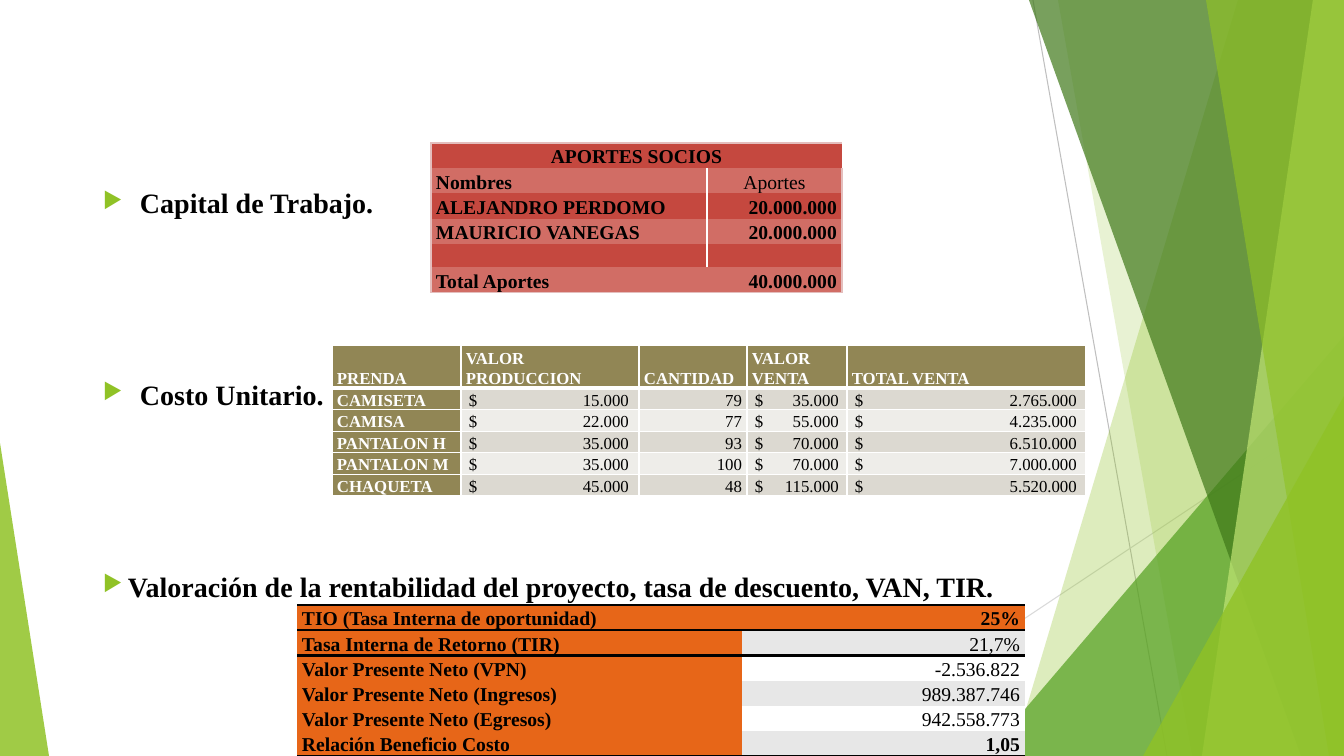
from dataclasses import dataclass, field
from lxml.etree import SubElement
from pptx import Presentation
from pptx.dml.color import RGBColor
from pptx.enum.shapes import MSO_CONNECTOR, MSO_SHAPE
from pptx.enum.text import MSO_ANCHOR, PP_ALIGN
from pptx.oxml.ns import qn
from pptx.util import Pt

EMU_PER_PX = 12192000 / 1344
SLIDE_WIDTH, SLIDE_HEIGHT = 1344, 756


@dataclass(frozen=True)
class Theme:
    font: str = "Times New Roman"
    bullet_size: int = 20
    body_size: int = 14
    small_size: int = 12
    black: str = "000000"
    white: str = "FFFFFF"
    lime: str = "90C226"
    pale_lime: str = "C0E474"
    green: str = "54A021"
    dark_green: str = "3F7819"
    line_dark: str = "BFBFBF"
    line_light: str = "D9D9D9"
    red: str = "C5483F"
    light_red: str = "D16D65"
    pink: str = "E4BEBD"
    olive: str = "918655"
    olive_bands: tuple = ("DCD9D1", "EEEDE9")
    orange: str = "E76618"
    grey_bands: tuple = ("E7E7E7", "FFFFFF")


THEME = Theme()


@dataclass
class Cell:
    text: str
    fill: str
    bold: bool = True
    color: str = THEME.black
    align: PP_ALIGN = PP_ALIGN.LEFT
    tab: int = 0
    borders: dict = field(default_factory=dict)


def px(length):
    return round(length * EMU_PER_PX)


def format_runs(paragraph, size, color, bold):
    for run in paragraph.runs:
        run.font.name = THEME.font
        run.font.size = Pt(size)
        run.font.bold = bold
        run.font.color.rgb = RGBColor.from_string(color)


def paint(shape, color, opacity):
    shape.shadow.inherit = False
    shape.fill.solid()
    shape.fill.fore_color.rgb = RGBColor.from_string(color)
    shape.line.fill.background()
    color_element = shape.fill._xPr.find(qn("a:solidFill"))[0]
    SubElement(color_element, qn("a:alpha"), val=str(opacity * 1000))


def add_line(slide, start, end, color):
    line = slide.shapes.add_connector(MSO_CONNECTOR.STRAIGHT, *map(px, start + end))
    line.line.color.rgb = RGBColor.from_string(color)
    line.line.width = Pt(0.75)
    SubElement(line._element.spPr, qn("a:effectLst"))


def add_band(slide, top_left, bottom_left, color, opacity):
    builder = slide.shapes.build_freeform(top_left, 0, scale=EMU_PER_PX)
    builder.add_line_segments(
        [(SLIDE_WIDTH, 0), (SLIDE_WIDTH, SLIDE_HEIGHT), (bottom_left, SLIDE_HEIGHT)])
    paint(builder.convert_to_shape(), color, opacity)


def add_triangle(slide, box, apex, color, opacity):
    triangle = slide.shapes.add_shape(MSO_SHAPE.ISOSCELES_TRIANGLE, *map(px, box))
    triangle.adjustments[0] = apex
    paint(triangle, color, opacity)


def add_bullets(slide, box, items, gap):
    frame = slide.shapes.add_textbox(*map(px, box)).text_frame
    frame.word_wrap = True
    frame.margin_top = frame.margin_bottom = 0
    frame.margin_left = frame.margin_right = px(10)
    frame.text = "\n".join(text for text, _ in items)
    for index, (paragraph, (_, indent)) in enumerate(zip(frame.paragraphs, items)):
        paragraph.space_before = Pt(gap if index else 0)
        format_runs(paragraph, THEME.bullet_size, THEME.black, True)
        properties = paragraph._p.get_or_add_pPr()
        properties.set("marL", str(px(indent)))
        properties.set("indent", str(-px(indent)))
        SubElement(SubElement(properties, qn("a:buClr")), qn("a:srgbClr"), val=THEME.lime)
        SubElement(properties, qn("a:buSzPct"), val="80000")
        SubElement(properties, qn("a:buChar"), char="▶")


def set_borders(cell, borders):
    properties = cell._tc.get_or_add_tcPr()
    sides = [side for side in "LRTB" if side in borders]
    for index, side in enumerate(sides):
        color, width = borders[side]
        line = SubElement(properties, qn(f"a:ln{side}"), w=str(Pt(width)))
        SubElement(SubElement(line, qn("a:solidFill")), qn("a:srgbClr"), val=color)
        properties.insert(index, line)


def fill_cell(cell, content, size):
    cell.fill.solid()
    cell.fill.fore_color.rgb = RGBColor.from_string(content.fill)
    cell.margin_left = px(8 if content.tab else 5)
    cell.margin_right = px(5)
    cell.margin_top = cell.margin_bottom = 0
    cell.vertical_anchor = MSO_ANCHOR.BOTTOM
    cell.text_frame.text = content.text
    paragraph = cell.text_frame.paragraphs[0]
    paragraph.alignment = content.align
    paragraph.line_spacing = 1.07
    paragraph.font.size = Pt(size)
    format_runs(paragraph, size, content.color, content.bold)
    if content.tab:
        stops = SubElement(paragraph._p.get_or_add_pPr(), qn("a:tabLst"))
        SubElement(stops, qn("a:tab"), pos=str(px(content.tab)), algn="r")
        paragraph._p.pPr.insert(1, stops)
    set_borders(cell, content.borders)


def add_grid(slide, left, top, widths, heights, rows, size):
    box = map(px, (left, top, sum(widths), sum(heights)))
    table = slide.shapes.add_table(len(heights), len(widths), *box).table
    table.first_row = table.horz_banding = False
    table._tbl.tblPr.find(qn("a:tableStyleId")).text = "{2D5ABB26-0587-4C30-8999-92F81FD0307C}"
    for column, width in zip(table.columns, widths):
        column.width = px(width)
    for row, height, contents in zip(table.rows, heights, rows):
        row.height = px(height)
        for cell, content in zip(row.cells, contents):
            fill_cell(cell, content, size)
    return table


def add_garments(slide):
    edge = (THEME.white, 1)
    box = dict.fromkeys("LRTB", edge)
    header_box = {**box, "B": (THEME.white, 3)}
    body_box = {**box, "T": (THEME.white, 3)}
    headers = ("PRENDA", "VALOR PRODUCCION", "CANTIDAD", "VALOR VENTA", "TOTAL VENTA")
    garments = (
        ("CAMISETA", "15.000", "79", "35.000", "2.765.000"),
        ("CAMISA", "22.000", "77", "55.000", "4.235.000"),
        ("PANTALON H", "35.000", "93", "70.000", "6.510.000"),
        ("PANTALON M", "35.000", "100", "70.000", "7.000.000"),
        ("CHAQUETA", "45.000", "48", "115.000", "5.520.000"),
    )
    tabs = (160, 0, 84, 222)
    rows = [[Cell(text, THEME.olive, color=THEME.white, borders=header_box) for text in headers]]
    for index, (name, *values) in enumerate(garments):
        borders = box if index else body_box
        band = THEME.olive_bands[index % 2]
        row = [Cell(name, THEME.olive, color=THEME.white, borders=borders)]
        for value, tab in zip(values, tabs):
            text = f"$\t{value}" if tab else value
            align = PP_ALIGN.LEFT if tab else PP_ALIGN.RIGHT
            row.append(Cell(text, band, False, align=align, tab=tab, borders=borders))
        rows.append(row)
    add_grid(slide, 332, 345, (129, 178, 108, 100, 239), [39] + [21] * 5, rows, THEME.small_size)


def add_contributions(slide):
    edge = (THEME.pink, 1)
    divider = (THEME.white, 1.5)
    entries = (
        ("APORTES SOCIOS", ""), ("Nombres", "Aportes"),
        ("ALEJANDRO PERDOMO", "20.000.000"), ("MAURICIO VANEGAS", "20.000.000"),
        ("", ""), ("Total Aportes", "40.000.000"),
    )
    last = len(entries) - 1
    rows = []
    for index, (name, amount) in enumerate(entries):
        fill = (THEME.red, THEME.light_red)[index % 2]
        outer = {"T": edge} if index == 0 else {"B": edge} if index == last else {}
        inner = {"R": divider} if 0 < index < last else {}
        title, heading = index == 0, index == 1
        rows.append([
            Cell(name, fill, align=PP_ALIGN.CENTER if title else PP_ALIGN.LEFT,
                 borders={"L": edge, **inner, **outer}),
            Cell(amount, fill, not heading, align=PP_ALIGN.CENTER if heading else PP_ALIGN.RIGHT,
                 borders={"R": edge, **outer}),
        ])
    table = add_grid(slide, 431, 143, (276, 135), [24] + [23] * 5, rows, THEME.body_size)
    table.cell(0, 0).merge(table.cell(0, 1))


def add_profitability(slide):
    rule = (THEME.black, 2)
    entries = (
        ("TIO (Tasa Interna de oportunidad)", "25%"),
        ("Tasa Interna de Retorno (TIR)", "21,7%"),
        ("Valor Presente Neto (VPN)", "-2.536.822"),
        ("Valor Presente Neto (Ingresos)", "989.387.746"),
        ("Valor Presente Neto (Egresos)", "942.558.773"),
        ("Relación Beneficio Costo", "1,05"),
    )
    last = len(entries) - 1
    rows = []
    for index, (name, value) in enumerate(entries):
        borders = {0: {"T": rule, "B": rule}, 1: {"T": rule}, last: {"B": rule}}.get(index, {})
        fill = THEME.grey_bands[(index - 1) % 2] if index else THEME.orange
        rows.append([
            Cell(name, THEME.orange, borders=borders),
            Cell(value, fill, index in (0, last), align=PP_ALIGN.RIGHT, borders=borders),
        ])
    add_grid(slide, 297, 605, (445, 283), [25] + [23] * 5, rows, THEME.body_size)


def add_backdrop(slide):
    add_line(slide, (1033, 0), (1167, 756), THEME.line_dark)
    add_line(slide, (1344, 406), (818, 756), THEME.line_light)
    add_band(slide, 1238, 1012, THEME.lime, 30)
    add_band(slide, 1058, 1192, THEME.lime, 20)
    add_triangle(slide, (985, 336, 359, 420), 1, THEME.green, 72)
    add_band(slide, 1029, 1301, THEME.dark_green, 70)
    add_band(slide, 1313, 1202, THEME.pale_lime, 70)
    add_band(slide, 1206, 1329, THEME.lime, 65)
    add_triangle(slide, (1143, 396, 201, 360), 1, THEME.lime, 80)
    add_triangle(slide, (0, 443, 49, 313), 0, THEME.lime, 85)


def main():
    presentation = Presentation()
    presentation.slide_width, presentation.slide_height = px(SLIDE_WIDTH), px(SLIDE_HEIGHT)
    slide = presentation.slides.add_slide(presentation.slide_layouts[6])
    add_backdrop(slide)
    add_bullets(slide, (93, 186, 1159, 414), (
        ("Capital de Trabajo.", 37),
        ("Costo Unitario.", 37),
        ("Valoración de la rentabilidad del proyecto, tasa de descuento, VAN, TIR.", 25),
    ), 113)
    add_garments(slide)
    add_contributions(slide)
    add_profitability(slide)
    presentation.save("out.pptx")


if __name__ == "__main__":
    main()
